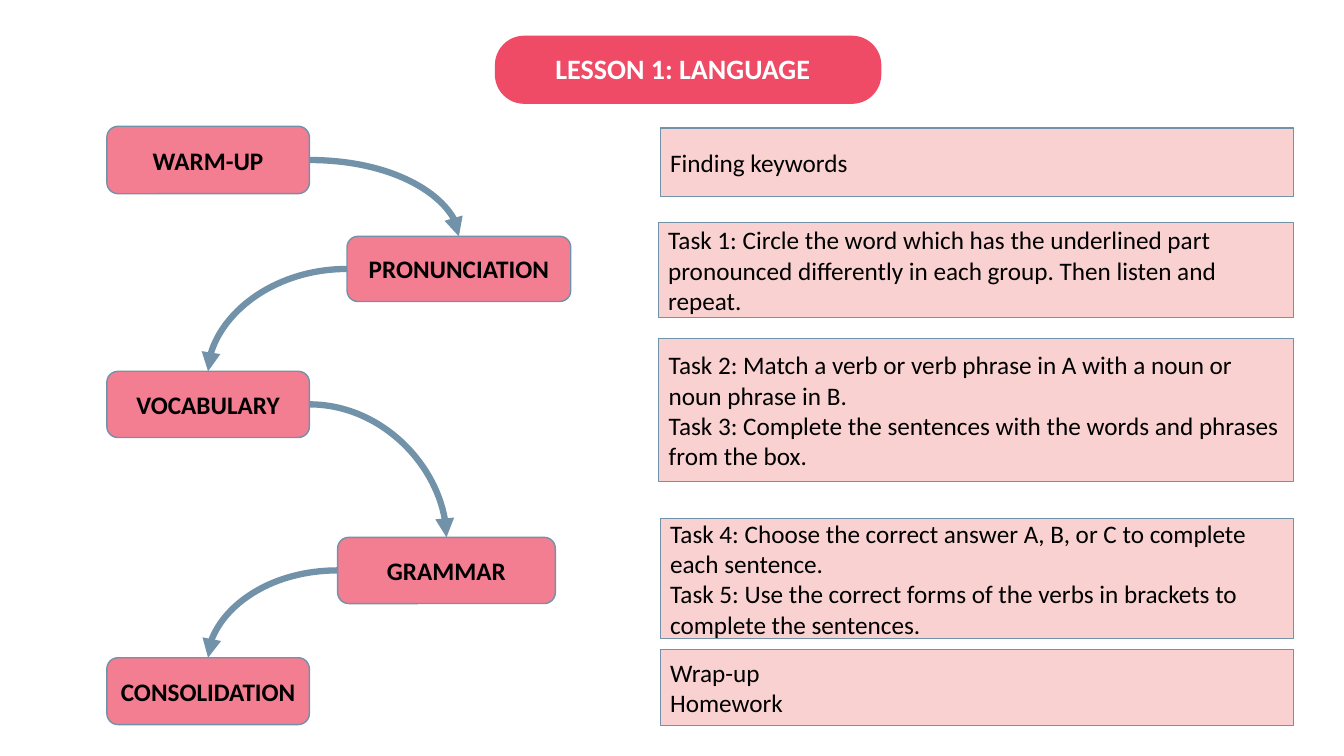
"""Build the lesson overview slide: a chain of stages beside their tasks."""
from itertools import pairwise

from lxml.etree import SubElement
from pptx import Presentation
from pptx.dml.color import RGBColor
from pptx.enum.shapes import MSO_CONNECTOR, MSO_SHAPE
from pptx.enum.text import MSO_ANCHOR, MSO_AUTO_SIZE, PP_ALIGN
from pptx.oxml.ns import qn
from pptx.util import Pt

COLORS = {"banner": "EF4B66", "stage": "F37D91", "task": "F7A5A5",
          "edge": "7192A9", "ink": "000000", "title": "FFFFFF"}
FONT = "Calibri"
LESSON = "LESSON 1: LANGUAGE"
BANNER_BOX = (353.5, 25.5, 276, 48.7)
LESSON_BOX = (389.5, 33.1, 204, 31.7)
TASK_RIGHT = 923.8

STAGES = [
    ("WARM-UP", (76.3, 90.2, 144.7, 48.2)),
    ("PRONUNCIATION", (247.9, 168.8, 159.8, 46.6)),
    ("VOCABULARY", (76.3, 265.2, 144.7, 47.3)),
    ("GRAMMAR", (241.2, 383.8, 155.5, 47.3)),
    ("CONSOLIDATION", (76.3, 469.8, 144.7, 47.8)),
]
TASKS = [
    (471.6, 91.4, 49, ["Finding keywords"]),
    (470.2, 159, 67.8, [
        "Task 1: Circle the word which has the underlined part pronounced "
        "differently in each group. Then listen and repeat."]),
    (470.6, 242, 102, [
        "Task 2: Match a verb or verb phrase in A with a noun or noun phrase in B.",
        "Task 3: Complete the sentences with the words and phrases from the box."]),
    (471.6, 370.6, 85.5, [
        "Task 4: Choose the correct answer A, B, or C to complete each sentence.",
        "Task 5: Use the correct forms of the verbs in brackets to complete the sentences."]),
    (471.6, 464.1, 54.2, ["Wrap-up", "Homework"]),
]


def rgb(name):
    return RGBColor.from_string(COLORS[name])


def write(shape, lines, size=18, color="ink", bold=False,
          align=PP_ALIGN.LEFT, anchor=MSO_ANCHOR.MIDDLE):
    frame = shape.text_frame
    frame.text = "\n".join(lines)
    frame.word_wrap = True
    frame.auto_size = MSO_AUTO_SIZE.NONE
    frame.vertical_anchor = anchor
    for paragraph in frame.paragraphs:
        paragraph.alignment = align
        for run in paragraph.runs:
            run.font.name, run.font.size, run.font.bold = FONT, Pt(size), bold
            run.font.color.rgb = rgb(color)


def add_box(slide, preset, box, fill, edge=None):
    shape = slide.shapes.add_shape(preset, *map(Pt, box))
    shape.shadow.inherit = False
    shape.fill.solid()
    shape.fill.fore_color.rgb = rgb(fill)
    if edge:
        shape.line.color.rgb = rgb(edge)
        shape.line.width = Pt(1)
    else:
        shape.line.fill.background()
    return shape


def add_arrow(slide, source, target):
    rightward = target.left > source.left
    start_x = source.left + source.width if rightward else source.left
    arrow = slide.shapes.add_connector(
        MSO_CONNECTOR.CURVE, start_x, source.top + source.height // 2,
        target.left + target.width // 2, target.top)
    arrow.begin_connect(source, 3 if rightward else 1)
    arrow.end_connect(target, 0)
    arrow.line.color.rgb = rgb("edge")
    arrow.line.width = Pt(4.5)
    properties = arrow._element.spPr
    properties.find(qn("a:prstGeom")).set("prst", "curvedConnector2")
    SubElement(properties.find(qn("a:ln")), qn("a:tailEnd"), type="triangle")
    SubElement(properties, qn("a:effectLst"))


def main():
    deck = Presentation()
    deck.slide_width, deck.slide_height = Pt(960), Pt(540)
    slide = deck.slides.add_slide(deck.slide_layouts[5])

    for left, top, height, lines in TASKS:
        task = add_box(slide, MSO_SHAPE.RECTANGLE,
                       (left, top, TASK_RIGHT - left, height), "task", "edge")
        tint = task._element.spPr.find(qn("a:solidFill"))[0]
        SubElement(tint, qn("a:alpha"), val="50000")
        write(task, lines)

    stages = []
    for name, box in STAGES:
        stage = add_box(slide, MSO_SHAPE.ROUNDED_RECTANGLE, box, "stage", "edge")
        write(stage, [name], bold=True, align=PP_ALIGN.CENTER)
        stages.append(stage)
    for source, target in pairwise(stages):
        add_arrow(slide, source, target)

    banner = add_box(slide, MSO_SHAPE.ROUNDED_RECTANGLE, BANNER_BOX, "banner")
    banner.adjustments[0] = 0.43
    lesson = slide.shapes.title
    lesson.left, lesson.top, lesson.width, lesson.height = map(Pt, LESSON_BOX)
    write(lesson, [LESSON], size=20, color="title", bold=True, anchor=MSO_ANCHOR.TOP)
    slide.shapes._spTree.append(lesson._element)

    deck.save("out.pptx")


if __name__ == "__main__":
    main()
